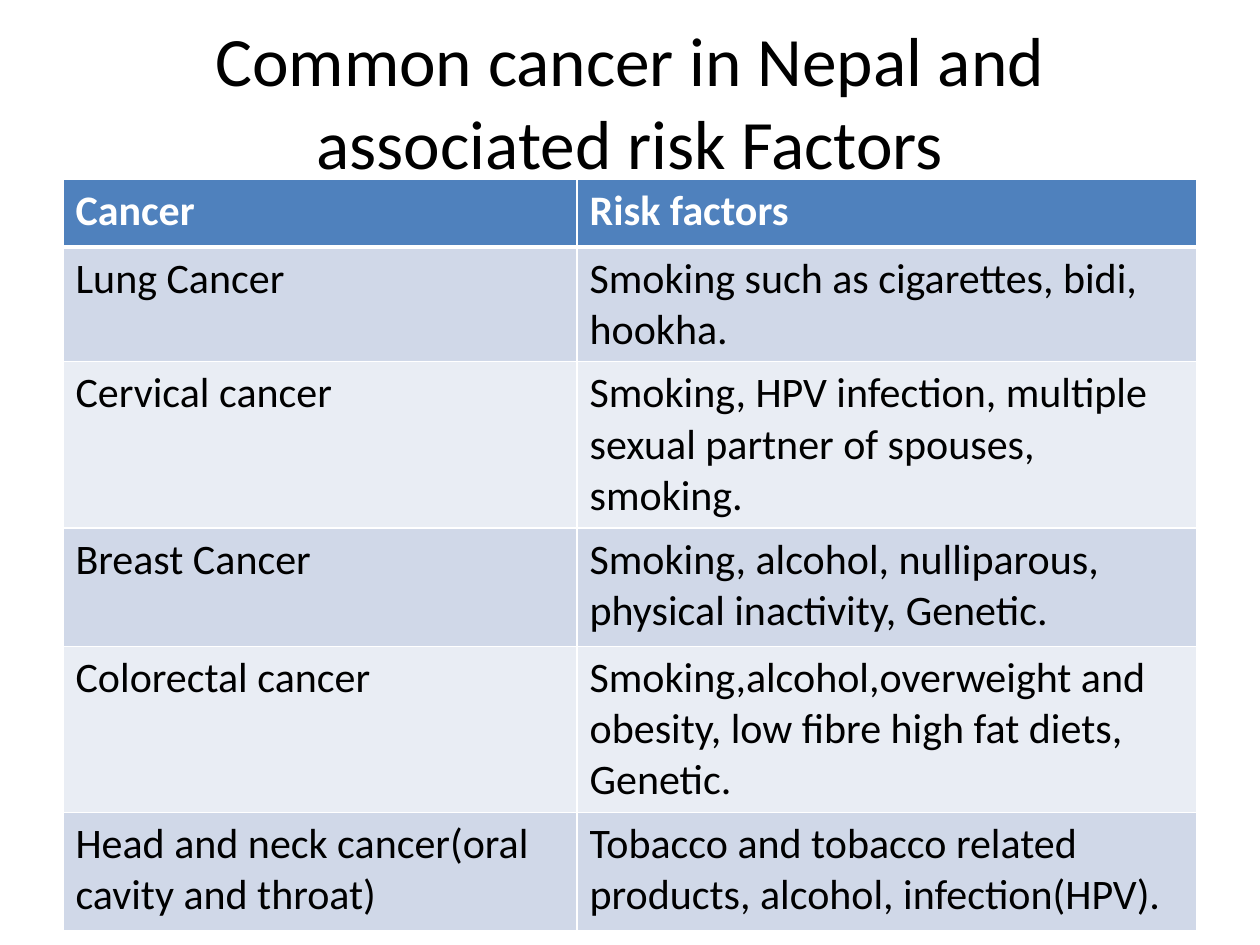
"""Build a slide with a title and a table of cancers and their risk factors."""
from lxml import etree
from pptx import Presentation, util as u
from pptx.dml import color
from pptx.enum import text
from pptx.oxml import ns

WIDE, HIGH = 10, 7.5
EDGE = 0.05 * WIDE
SPAN = WIDE - 2 * EDGE
TOP = 1.42
COLS = [4.08, 4.92]
TALL = [0.54, 0.91, 1.32, 0.94, 1.32, 0.94]
HEAD, BANDS = "4F81BD", ["E9EDF4", "D0D8E8"]
ROWS = [
    ("Cancer", "Risk factors"),
    ("Lung Cancer", "Smoking such as cigarettes, bidi, hookha."),
    ("Cervical cancer",
     "Smoking, HPV infection, multiple sexual partner of spouses, smoking."),
    ("Breast Cancer",
     "Smoking, alcohol, nulliparous, physical inactivity, Genetic."),
    ("Colorectal cancer",
     "Smoking,alcohol,overweight and obesity, low fibre high fat diets, Genetic."),
    ("Head and neck cancer(oral cavity and throat)",
     "Tobacco and tobacco related products, alcohol, infection(HPV)."),
]


def tint(code):
    """Turn a hex string into a colour."""
    return color.RGBColor.from_string(code)


def write(frame, words, size=24, hue="000000", bold=False,
          align=text.PP_ALIGN.LEFT):
    """Put formatted words into a text frame."""
    frame.word_wrap = True
    para = frame.paragraphs[0]
    para.alignment = align
    run = para.add_run()
    run.text = words
    run.font.name = "Calibri"
    run.font.size = u.Pt(size)
    run.font.bold = bold
    run.font.color.rgb = tint(hue)


def rule(cell, side, width, hue="FFFFFF"):
    """Draw one border of a cell."""
    line = etree.SubElement(cell._tc.get_or_add_tcPr(), ns.qn("a:ln" + side),
                            w=str(u.Pt(width)))
    fill = etree.SubElement(line, ns.qn("a:solidFill"))
    etree.SubElement(fill, ns.qn("a:srgbClr"), val=hue)


def title(slide, words):
    """Add the centred title."""
    box = slide.shapes.add_textbox(u.Inches(EDGE), u.Inches(0.17),
                                   u.Inches(SPAN), u.Inches(1.25))
    box.text_frame.vertical_anchor = text.MSO_ANCHOR.MIDDLE
    write(box.text_frame, words, size=39.6, align=text.PP_ALIGN.CENTER)


def grid(slide, rows):
    """Add the banded table with its header row."""
    table = slide.shapes.add_table(
        len(rows), len(COLS), u.Inches(EDGE), u.Inches(TOP),
        u.Inches(SPAN), u.Inches(sum(TALL))).table
    for col, width in zip(table.columns, COLS):
        col.width = u.Inches(width)
    for r, (row, tall) in enumerate(zip(rows, TALL)):
        table.rows[r].height = u.Inches(tall)
        top = r == 0
        for c, words in enumerate(row):
            cell = table.cell(r, c)
            for side in "LRTB":
                thick = (r, side) in [(0, "B"), (1, "T")]
                rule(cell, side, 3 if thick else 1)
            cell.fill.solid()
            cell.fill.fore_color.rgb = tint(HEAD if top else BANDS[r % 2])
            write(cell.text_frame, words, bold=top,
                  hue="FFFFFF" if top else "000000")


def main():
    """Build and save the slide."""
    deck = Presentation()
    deck.slide_width, deck.slide_height = u.Inches(WIDE), u.Inches(HIGH)
    slide = deck.slides.add_slide(deck.slide_layouts[6])
    title(slide, "Common cancer in Nepal and associated risk Factors")
    grid(slide, ROWS)
    deck.save("out.pptx")


if __name__ == "__main__":
    main()
